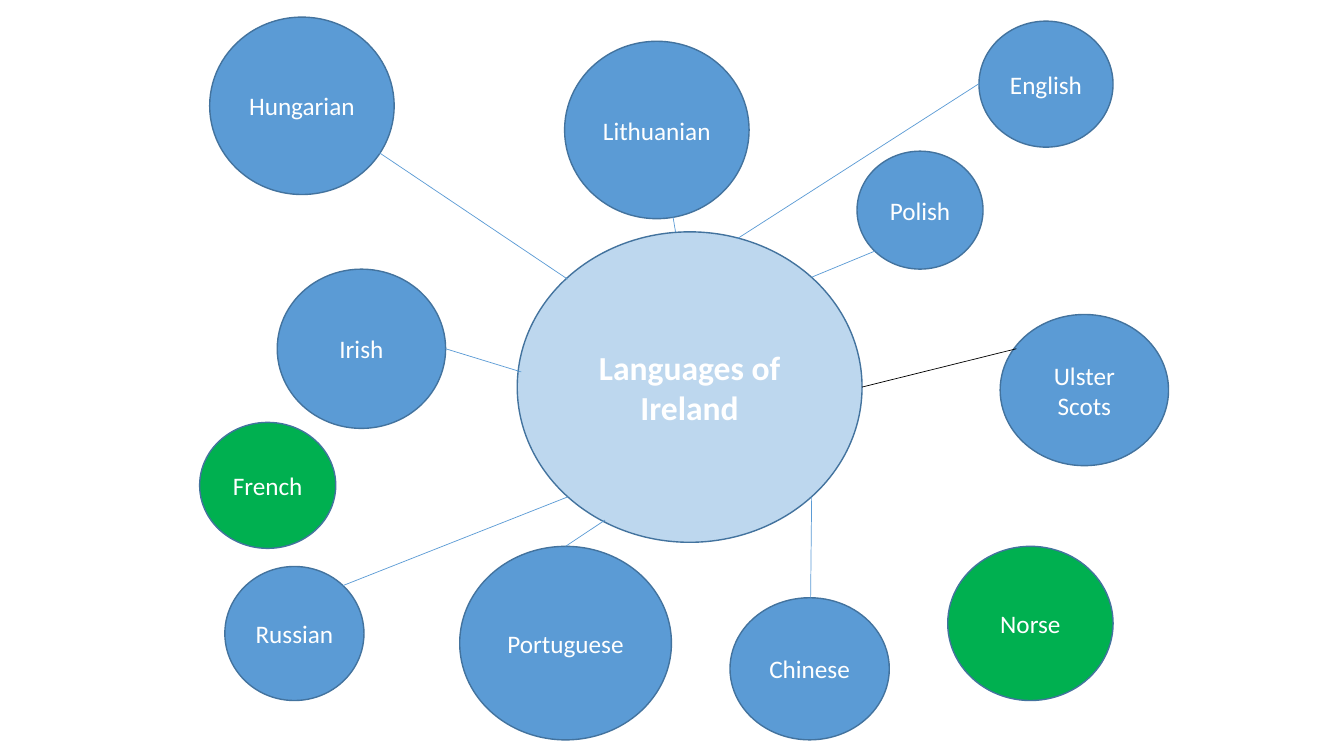
from pptx import Presentation
from pptx import util as u
from pptx.dml.color import RGBColor
from pptx.enum import shapes, text
from pptx.oxml.ns import qn
from lxml import etree

BLUE, PALE_BLUE, GREEN = "5B9BD5", "BDD7EE", "00B050"
OUTLINE, WHITE, BLACK = "43739E", "FFFFFF", "000000"


def color(value):
    return RGBColor.from_string(value)


class MindMap:
    """Holds the text style and the slide being drawn."""

    font = "Calibri"
    inset = u.Inches(0.08)

    def __init__(self, slide):
        self.slide = slide

    def bubble(self, label, left, top, width, height, fill=BLUE, size=18, bold=False):
        shape = self.slide.shapes.add_shape(
            shapes.MSO_SHAPE.OVAL, u.Inches(left), u.Inches(top),
            u.Inches(width), u.Inches(height))
        shape.shadow.inherit = False
        shape.fill.solid()
        shape.fill.fore_color.rgb = color(fill)
        shape.line.color.rgb = color(OUTLINE)
        shape.line.width = u.Pt(1)

        frame = shape.text_frame
        frame.word_wrap = True
        frame.margin_left = frame.margin_right = self.inset
        frame.vertical_anchor = text.MSO_ANCHOR.MIDDLE
        frame.text = label
        paragraph = frame.paragraphs[0]
        paragraph.alignment = text.PP_ALIGN.CENTER
        font = paragraph.runs[0].font
        font.name, font.size, font.bold = self.font, u.Pt(size), bold
        font.color.rgb = color(WHITE)

    def link(self, x1, y1, x2, y2, line=BLUE):
        connector = self.slide.shapes.add_connector(
            shapes.MSO_CONNECTOR.STRAIGHT, u.Inches(x1), u.Inches(y1),
            u.Inches(x2), u.Inches(y2))
        connector.line.color.rgb = color(line)
        connector.line.width = u.Pt(0.5)
        properties = connector._element.spPr
        etree.SubElement(properties, qn("a:effectLst"))


def main():
    presentation = Presentation()
    presentation.slide_width = u.Inches(13.33)
    presentation.slide_height = u.Inches(7.5)
    slide = presentation.slides.add_slide(presentation.slide_layouts[6])
    mind_map = MindMap(slide)

    # Central topic
    mind_map.bubble("Languages of Ireland", 5.13, 2.3, 3.42, 3.08,
                    fill=PALE_BLUE, size=24, bold=True)

    # Linked languages: label, left, top, width, height
    for language in (
        ("English", 9.71, 0.21, 1.33, 1.25),
        ("Irish", 2.75, 2.67, 1.67, 1.58),
        ("Ulster Scots", 9.92, 3.12, 1.67, 1.5),
        ("Polish", 8.5, 1.5, 1.25, 1.17),
        ("Russian", 2.23, 5.62, 1.38, 1.33),
        ("Lithuanian", 5.6, 0.41, 1.83, 1.76),
        ("Chinese", 7.24, 5.93, 1.58, 1.41),
        ("Portuguese", 4.56, 5.42, 2.1, 1.92),
        ("Hungarian", 2.08, 0.17, 1.83, 1.76),
    ):
        mind_map.bubble(*language)

    # Links between the languages and the topic
    for ends in (
        (3.71, 1.48, 5.63, 2.77),
        (4.42, 3.46, 5.17, 3.69),
        (3.4, 5.81, 5.63, 4.93),
        (5.61, 5.42, 6, 5.16),
        (8.04, 5.93, 8.05, 4.93),
        (8.05, 2.75, 8.68, 2.49),
        (7.31, 2.37, 9.71, 0.83),
        (6.7, 2.3, 6.67, 2.12),
    ):
        mind_map.link(*ends)
    mind_map.link(8.55, 3.84, 10.08, 3.46, line=BLACK)

    # Unlinked languages
    mind_map.bubble("Norse", 9.4, 5.42, 1.64, 1.53, fill=GREEN)
    mind_map.bubble("French", 1.98, 4.19, 1.35, 1.25, fill=GREEN)

    presentation.save("out.pptx")


if __name__ == "__main__":
    main()
